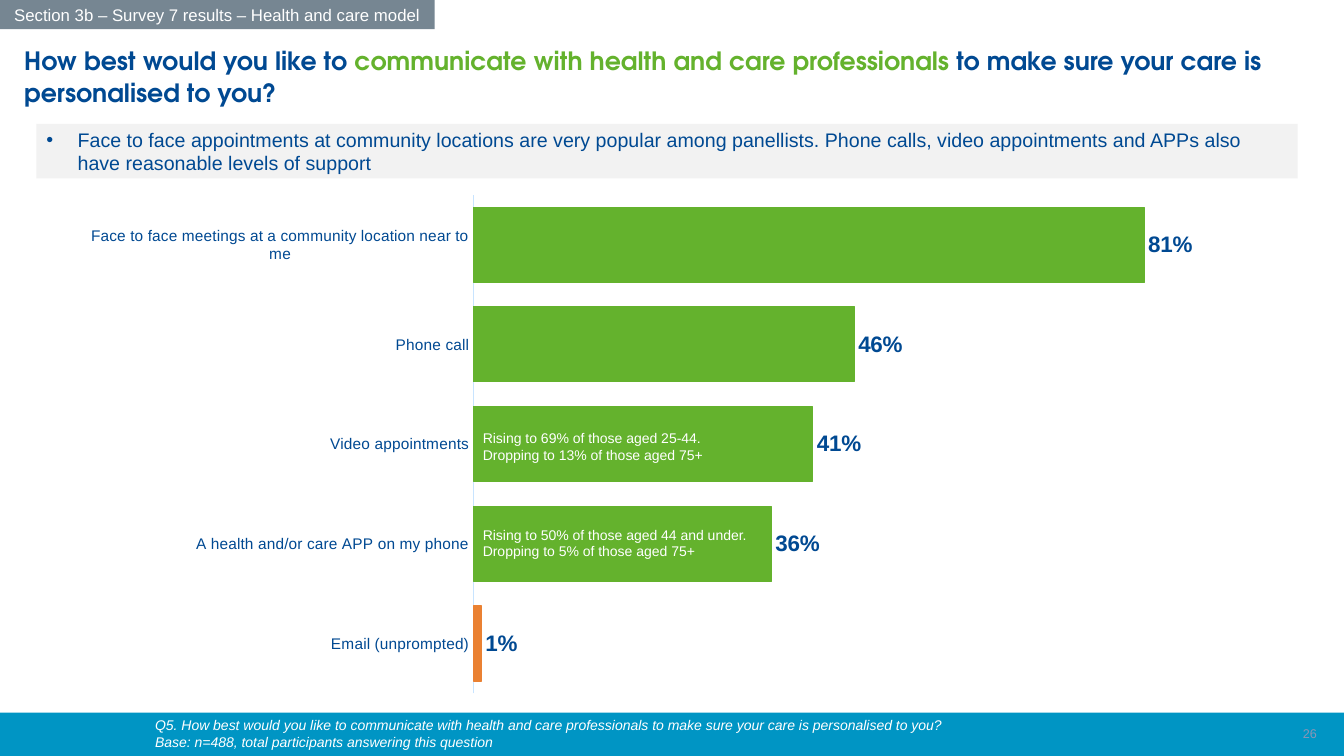
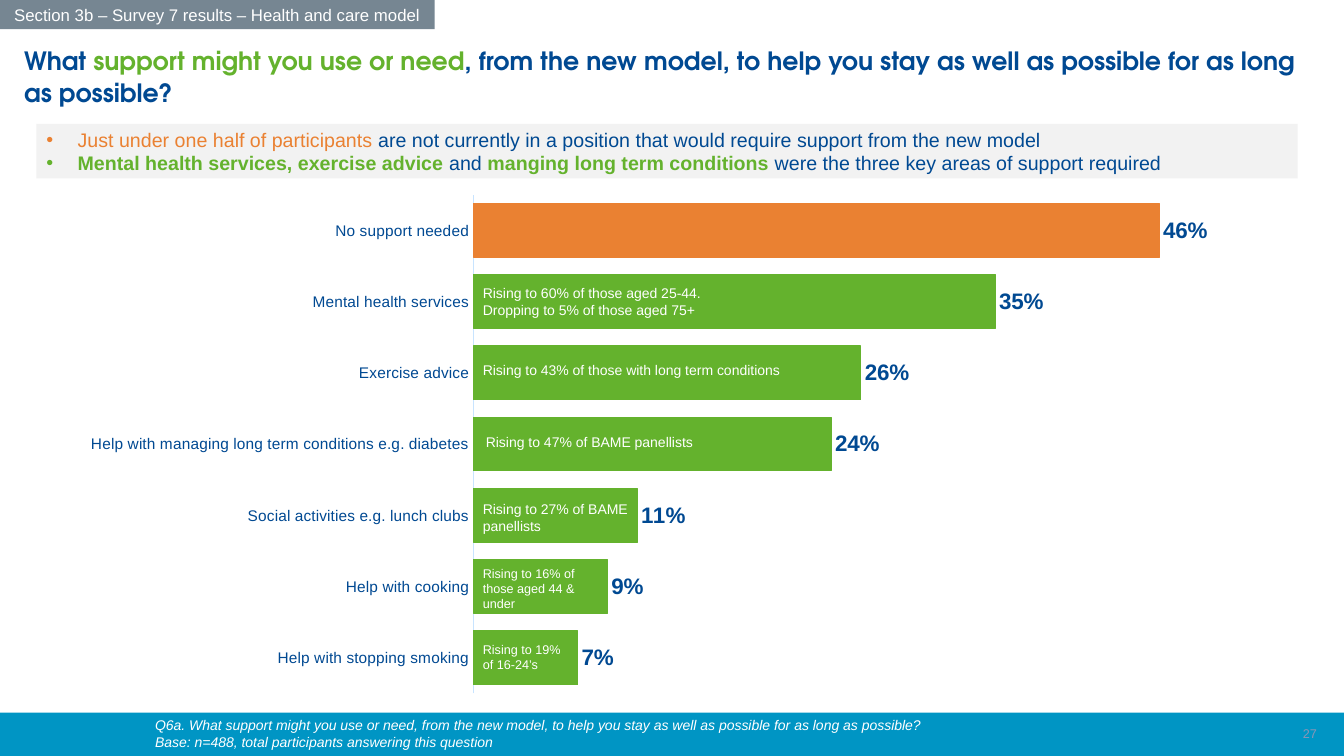
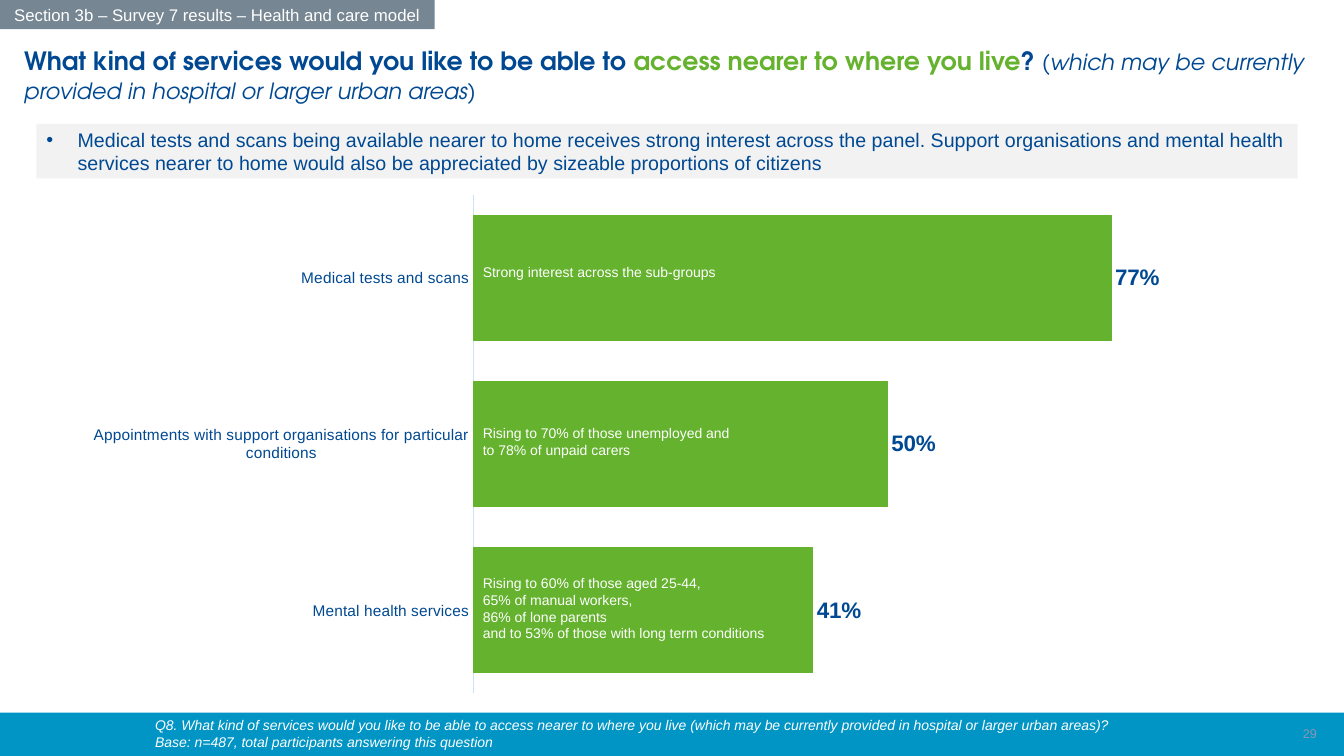
from lxml.etree import SubElement
from pptx import Presentation
from pptx.chart.data import CategoryChartData
from pptx.dml.color import RGBColor
from pptx.enum.chart import XL_CHART_TYPE, XL_LABEL_POSITION, XL_TICK_MARK
from pptx.enum.shapes import MSO_SHAPE
from pptx.enum.text import MSO_ANCHOR, MSO_AUTO_SIZE, PP_ALIGN
from pptx.oxml import parse_xml
from pptx.oxml.ns import nsdecls, qn
from pptx.util import Inches, Pt

COLOURS = {
    "navy": "004992",
    "green": "64B22D",
    "orange": "EA8132",
    "band": "0095C4",
    "tab": "768692",
    "panel": "F2F2F2",
    "axis": "C8E4FF",
    "page": "8C95B6",
    "white": "FFFFFF",
}
BODY_FONT = "Arial"
TITLE_FONT = "TeX Gyre Adventor"
SECTION = "Section 3b – Survey 7 results – Health and care model"
NOTE_LEFT = 4.69
PLOT_AREA = {"x": 0.344, "y": 0.031, "w": 0.655, "h": 0.946}

GREEN = {"colour": "green"}
GREEN_BOLD = {"colour": "green", "bold": True}
ORANGE = {"colour": "orange"}


def rgb(name):
    return RGBColor.from_string(COLOURS[name])


def format_font(font, size, colour, name=BODY_FONT, bold=False, italic=False):
    font.size = Pt(size)
    font.name = name
    font.bold = bold
    font.italic = italic
    font.color.rgb = rgb(colour)


def add_bullet(paragraph):
    properties = paragraph._p.get_or_add_pPr()
    properties.set("marL", str(Inches(0.31)))
    properties.set("indent", str(-Inches(0.31)))
    SubElement(properties, qn("a:buFont"), typeface=BODY_FONT)
    SubElement(properties, qn("a:buChar"), char="•")


def write(shape, paragraphs, align=PP_ALIGN.LEFT, anchor=MSO_ANCHOR.TOP,
          bullets=False, line_spacing=1.0, **font_format):
    """Fill a shape; a paragraph is a string or a list of strings and (text, format) pairs."""
    frame = shape.text_frame
    frame.word_wrap = True
    frame.auto_size = MSO_AUTO_SIZE.NONE
    frame.vertical_anchor = anchor
    for index, runs in enumerate(paragraphs):
        paragraph = frame.add_paragraph() if index else frame.paragraphs[0]
        if bullets:
            add_bullet(paragraph)
        paragraph.alignment = align
        paragraph.line_spacing = line_spacing
        paragraph.space_before = Pt(0)
        for item in [runs] if isinstance(runs, str) else runs:
            text, changes = (item, {}) if isinstance(item, str) else item
            run = paragraph.add_run()
            run.text = text
            format_font(run.font, **{**font_format, **changes})


def place(shape, left, top, width, height):
    shape.left, shape.top = Inches(left), Inches(top)
    shape.width, shape.height = Inches(width), Inches(height)


def add_text(slide, box, paragraphs, **text_format):
    shape = slide.shapes.add_textbox(*map(Inches, box))
    write(shape, paragraphs, **text_format)


def add_block(slide, box, colour):
    shape = slide.shapes.add_shape(MSO_SHAPE.RECTANGLE, *map(Inches, box))
    shape.shadow.inherit = False
    shape.fill.solid()
    shape.fill.fore_color.rgb = rgb(colour)
    shape.line.fill.background()
    return shape


def add_frame(slide, title, summary, footer, page):
    """Add what every slide has: title, summary panel, section tab and footer band."""
    place(slide.shapes.title, 0.14, 0.38, 13.06, 0.73)
    write(slide.shapes.title, [title], line_spacing=1.07, size=18,
          colour="navy", name=TITLE_FONT, bold=True)

    panel = slide.placeholders[1]
    place(panel, 0.36, 1.23, 12.51, 0.54)
    panel.fill.solid()
    panel.fill.fore_color.rgb = rgb("panel")
    write(panel, summary, anchor=MSO_ANCHOR.MIDDLE, bullets=True,
          size=14, colour="navy")

    tab = add_block(slide, (0, 0, 4.31, 0.29), "tab")
    write(tab, [SECTION], align=PP_ALIGN.CENTER, anchor=MSO_ANCHOR.MIDDLE,
          size=12, colour="white")

    add_block(slide, (0, 7.07, 13.33, 0.43), "band")
    add_text(slide, (1.44, 7.06, 10.04, 0.44), footer,
             size=10, colour="white", italic=True)
    add_text(slide, (10.16, 7.08, 3, 0.4), [page], align=PP_ALIGN.RIGHT,
             anchor=MSO_ANCHOR.MIDDLE, size=9, colour="page")


def fix_plot_area(chart):
    """Pin the inner plot area so that the bars start at the same place on each slide."""
    plot_area = chart._chartSpace.chart.plotArea
    for layout in plot_area.findall(qn("c:layout")):
        plot_area.remove(layout)
    sizes = "".join(f'<c:{key} val="{value}"/>' for key, value in PLOT_AREA.items())
    plot_area.insert(0, parse_xml(
        f'<c:layout {nsdecls("c")}><c:manualLayout><c:layoutTarget val="inner"/>'
        f'<c:xMode val="edge"/><c:yMode val="edge"/>{sizes}'
        f'</c:manualLayout></c:layout>'))


def colour_bar(bar, colour):
    bar.format.fill.solid()
    bar.format.fill.fore_color.rgb = rgb(colour)
    bar.format.line.color.rgb = rgb(colour)
    bar.format.line.width = Pt(0.75)


def add_bar_chart(slide, shares, maximum, highlight=None):
    """Draw shares, listed from top to bottom, with one bar optionally in orange."""
    categories = list(reversed(shares))
    data = CategoryChartData(number_format="0%")
    data.categories = categories
    data.add_series("Series 1", [shares[category] for category in categories])
    chart = slide.shapes.add_chart(
        XL_CHART_TYPE.BAR_CLUSTERED, Inches(0.81), Inches(1.77),
        Inches(11.29), Inches(5.23), data).chart
    chart.has_title = False
    chart.has_legend = False
    format_font(chart.font, 10, "navy")
    fix_plot_area(chart)

    category_axis = chart.category_axis
    category_axis.major_tick_mark = XL_TICK_MARK.NONE
    category_axis.format.line.color.rgb = rgb("axis")
    category_axis.format.line.width = Pt(0.75)
    format_font(category_axis.tick_labels.font, 11, "navy")

    value_axis = chart.value_axis
    value_axis.minimum_scale = 0
    value_axis.maximum_scale = maximum
    value_axis.has_major_gridlines = False
    value_axis.visible = False

    plot = chart.plots[0]
    plot.gap_width = 33
    plot.vary_by_categories = False
    series = plot.series[0]
    colour_bar(series, "green")
    if highlight:
        colour_bar(series.points[categories.index(highlight)], "orange")

    labels = series.data_labels
    labels.show_value = True
    labels.number_format = "0%"
    labels.number_format_is_linked = False
    labels.position = XL_LABEL_POSITION.OUTSIDE_END
    format_font(labels.font, 16, "navy", bold=True)


def add_note(slide, top, width, lines, left=NOTE_LEFT, size=10):
    height = 0.1 + len(lines) * size / 60
    add_text(slide, (left, top, width, height), lines, size=size, colour="white")


def add_communication_slide(slide):
    add_frame(
        slide,
        ["How best would you like to ",
         ("communicate with health and care professionals ", GREEN),
         "to make sure your care is personalised to you?"],
        ["Face to face appointments at community locations are very popular among "
         "panellists. Phone calls, video appointments and APPs also have reasonable "
         "levels of support"],
        ["Q5. How best would you like to communicate with health and care "
         "professionals to make sure your care is personalised to you?",
         "Base: n=488, total participants answering this question"],
        "26")
    add_bar_chart(slide, {
        "Face to face meetings at a community location near to me": 0.81,
        "Phone call": 0.46,
        "Video appointments": 0.41,
        "A health and/or care APP on my phone": 0.36,
        "Email (unprompted)": 0.01,
    }, maximum=0.9, highlight="Email (unprompted)")
    add_note(slide, 4.21, 2.38, ["Rising to 69% of those aged 25-44.",
                                 "Dropping to 13% of those aged 75+"])
    add_note(slide, 5.17, 2.9, ["Rising to 50% of those aged 44 and under.",
                                "Dropping to 5% of those aged 75+"])


def add_support_slide(slide):
    add_frame(
        slide,
        ["What ", ("support might you use or need", GREEN),
         ", from the new model, to help you stay as well as possible for as long "
         "as possible?"],
        [[("Just under one half of participants ", ORANGE),
          "are not currently in a position that would require support from the "
          "new model"],
         [("Mental health services, exercise advice ", GREEN_BOLD), "and ",
          ("manging long term conditions ", GREEN_BOLD),
          "were the three key areas of support required"]],
        ["Q6a. What support might you use or need, from the new model, to help you "
         "stay as well as possible for as long as possible?",
         "Base: n=488, total participants answering this question"],
        "27")
    add_bar_chart(slide, {
        "No support needed": 0.46,
        "Mental health services": 0.35,
        "Exercise advice": 0.26,
        "Help with managing long term conditions e.g. diabetes": 0.24,
        "Social activities e.g. lunch clubs": 0.11,
        "Help with cooking": 0.09,
        "Help with stopping smoking": 0.07,
    }, maximum=0.5, highlight="No support needed")
    add_note(slide, 2.77, 2.45, ["Rising to 60% of those aged 25-44.",
                                 "Dropping to 5% of those aged 75+"])
    add_note(slide, 3.54, 3.2, ["Rising to 43% of those with long term conditions"])
    add_note(slide, 4.25, 2.35, ["Rising to 47% of BAME panellists"], left=4.72)
    add_note(slide, 4.92, 1.7, ["Rising to 27% of BAME", "panellists"])
    add_note(slide, 5.56, 1.2, ["Rising to 16% of", "those aged 44 &", "under"], size=9)
    add_note(slide, 6.32, 1.05, ["Rising to 19%", "of 16-24’s"], size=9)


def add_services_slide(slide):
    add_frame(
        slide,
        ["What kind of services would you like to be able to ",
         ("access nearer to where you live", GREEN), "? ",
         ("(which may be currently provided in hospital or larger urban areas)",
          {"size": 16, "bold": False, "italic": True})],
        ["Medical tests and scans being available nearer to home receives strong "
         "interest across the panel. Support organisations and mental health "
         "services nearer to home would also be appreciated by sizeable proportions "
         "of citizens"],
        ["Q8. What kind of services would you like to be able to access nearer to "
         "where you live (which may be currently provided in hospital or larger "
         "urban areas)?",
         "Base: n=487, total participants answering this question"],
        "29")
    add_bar_chart(slide, {
        "Medical tests and scans": 0.77,
        "Appointments with support organisations for particular conditions": 0.5,
        "Mental health services": 0.41,
    }, maximum=0.9)
    add_note(slide, 2.56, 2.6, ["Strong interest across the sub-groups"])
    add_note(slide, 4.16, 2.7, ["Rising to 70% of those unemployed and",
                                "to 78% of unpaid carers"])
    add_note(slide, 5.65, 3.05, ["Rising to 60% of those aged 25-44,",
                                 "65% of manual workers,",
                                 "86% of lone parents",
                                 "and to 53% of those with long term conditions"])


def main():
    presentation = Presentation()
    presentation.slide_width = Inches(13.33)
    presentation.slide_height = Inches(7.5)
    title_and_content = presentation.slide_layouts[1]
    for build in (add_communication_slide, add_support_slide, add_services_slide):
        build(presentation.slides.add_slide(title_and_content))
    presentation.save("out.pptx")


if __name__ == "__main__":
    main()
